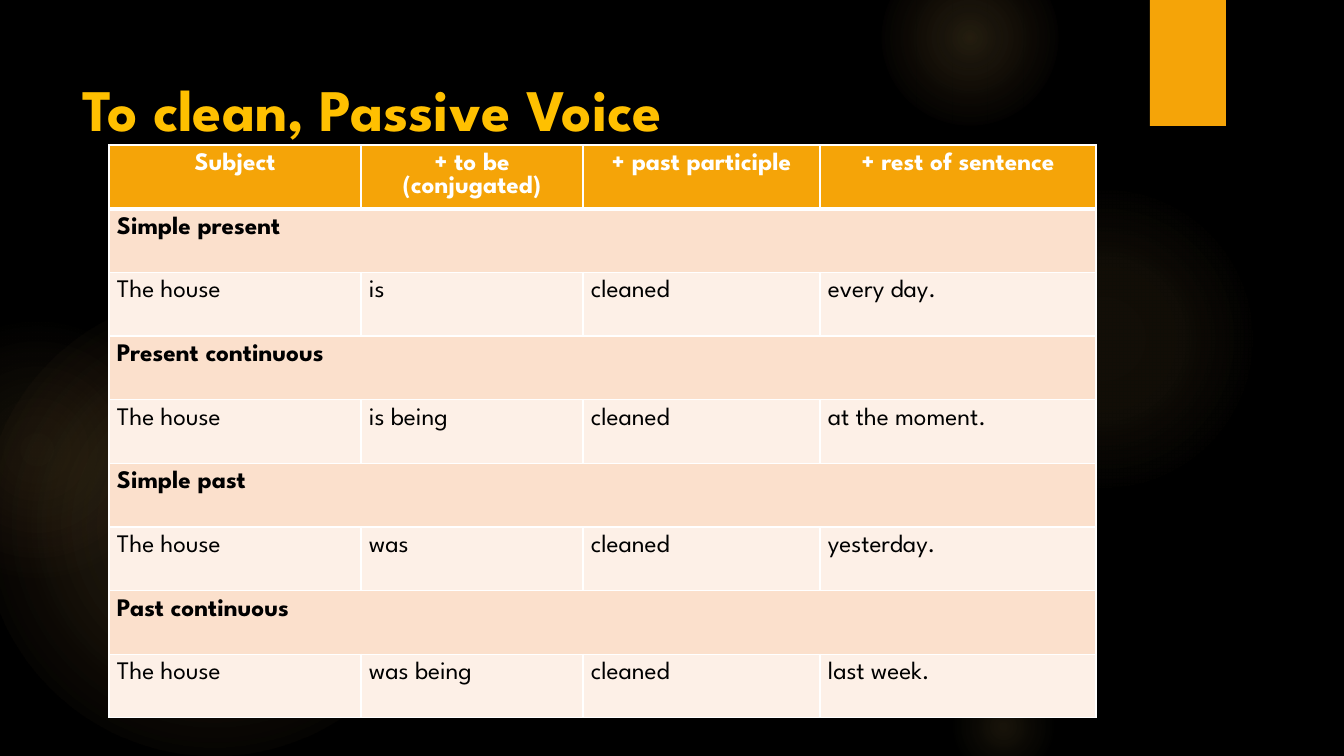
from lxml.etree import SubElement
from pptx import Presentation
from pptx.dml.color import RGBColor
from pptx.enum.shapes import MSO_SHAPE
from pptx.enum.text import MSO_ANCHOR, PP_ALIGN
from pptx.oxml import parse_xml
from pptx.oxml.ns import nsdecls, qn
from pptx.util import Pt

HEADING = "To clean, Passive Voice"
COLUMNS = [
    ("Subject", 252),
    ("+ to be (conjugated)", 222),
    ("+ past participle", 237),
    ("+ rest of sentence", 276),
]
TENSES = [
    ("Simple present", ("The house", "is", "cleaned", "every day.")),
    ("Present continuous", ("The house", "is being", "cleaned", "at the moment.")),
    ("Simple past", ("The house", "was", "cleaned", "yesterday.")),
    ("Past continuous", ("The house", "was being", "cleaned", "last week.")),
]

BLACK = RGBColor(0x00, 0x00, 0x00)
WHITE = RGBColor(0xFF, 0xFF, 0xFF)
GOLD = RGBColor(0xFF, 0xC0, 0x00)
ORANGE = RGBColor(0xF5, 0xA4, 0x08)
PEACH = RGBColor(0xFB, 0xE0, 0xCC)
CREAM = RGBColor(0xFD, 0xF0, 0xE7)
GLOW = RGBColor(0xFA, 0xC9, 0x6A)
CORAL = RGBColor(0xF5, 0x9B, 0x74)

GLOWS = [
    (-17, 294, 462, [(0, GLOW, 11), (36, GLOW, 10), (75, GLOW, 0)]),
    (-93, 320, 260, [(0, GLOW, 8), (36, GLOW, 5), (71, CORAL, 0)]),
    (949, 184, 310, [(0, GLOW, 7), (36, GLOW, 6), (69, GLOW, 0)]),
    (882, -50, 176, [(0, GLOW, 14), (36, GLOW, 7), (73, GLOW, 0)]),
    (949, 672, 109, [(0, GLOW, 10), (31, GLOW, 5), (66, GLOW, 0)]),
]
FONT = "League Spartan"
TABLE_LEFT, TABLE_TOP, TABLE_HEIGHT = 109, 145, 573
CELL_INSET = 8


def px(length):
    return round(length * 914400 / 100.8)


def add_run(paragraph, text, size, color, bold):
    run = paragraph.add_run()
    run.text = text
    run.font.name = FONT
    run.font.size = Pt(size)
    run.font.bold = bold
    run.font.color.rgb = color


def add_glow(slide, left, top, size, stops):
    glow = slide.shapes.add_shape(MSO_SHAPE.OVAL, px(left), px(top), px(size), px(size))
    glow.shadow.inherit = False
    glow.line.fill.background()
    stop_xml = "".join(
        f'<a:gs pos="{position * 1000}"><a:srgbClr val="{color}">'
        f'<a:alpha val="{opacity * 1000}"/></a:srgbClr></a:gs>'
        for position, color, opacity in stops
    )
    gradient = parse_xml(
        f'<a:gradFill {nsdecls("a")}><a:gsLst>{stop_xml}</a:gsLst><a:path path="circle">'
        '<a:fillToRect l="50000" t="50000" r="50000" b="50000"/></a:path></a:gradFill>'
    )
    glow.element.spPr.find(qn("a:prstGeom")).addnext(gradient)


def set_borders(cell, top, bottom):
    properties = cell._tc.get_or_add_tcPr()
    widths = [("lnL", 1), ("lnR", 1), ("lnT", top), ("lnB", bottom)]
    for order, (side, width) in enumerate(widths):
        border = SubElement(properties, qn(f"a:{side}"), w=str(Pt(width)))
        fill = SubElement(border, qn("a:solidFill"))
        SubElement(fill, qn("a:srgbClr"), val=str(WHITE))
        properties.insert(order, border)


def add_tense_table(slide):
    rows = [([name for name, _ in COLUMNS], ORANGE, WHITE, True)]
    for tense, sentence in TENSES:
        rows.append(([tense, "", "", ""], PEACH, BLACK, True))
        rows.append((sentence, CREAM, BLACK, False))
    table = slide.shapes.add_table(
        len(rows), len(COLUMNS), px(TABLE_LEFT), px(TABLE_TOP),
        px(sum(width for _, width in COLUMNS)), px(TABLE_HEIGHT),
    ).table
    table.horz_banding = False
    for column, (_, width) in zip(table.columns, COLUMNS):
        column.width = px(width)
    for r, (texts, fill, color, bold) in enumerate(rows):
        table.rows[r].height = px(TABLE_HEIGHT / len(rows))
        for c, text in enumerate(texts):
            cell = table.cell(r, c)
            cell.margin_left = cell.margin_right = px(CELL_INSET)
            cell.margin_top = cell.margin_bottom = px(CELL_INSET)
            cell.fill.solid()
            cell.fill.fore_color.rgb = fill
            set_borders(cell, 3 if r == 1 else 1, 3 if r == 0 else 1)
            if text:
                paragraph = cell.text_frame.paragraphs[0]
                paragraph.alignment = PP_ALIGN.CENTER if r == 0 else PP_ALIGN.LEFT
                add_run(paragraph, text, 18, color, bold)
        if fill == PEACH:
            table.cell(r, 0).merge(table.cell(r, len(COLUMNS) - 1))


def main():
    deck = Presentation()
    deck.slide_width, deck.slide_height = px(1344), px(756)
    slide = deck.slides.add_slide(deck.slide_layouts[5])
    slide.background.fill.solid()
    slide.background.fill.fore_color.rgb = BLACK

    for glow in GLOWS:
        add_glow(slide, *glow)

    tab = slide.shapes.add_shape(MSO_SHAPE.RECTANGLE, px(1150), 0, px(76), px(126))
    tab.shadow.inherit = False
    tab.fill.solid()
    tab.fill.fore_color.rgb = ORANGE
    tab.line.fill.background()

    title = slide.shapes.title
    slide.shapes.element.append(title.element)
    title.left, title.top, title.width, title.height = px(72), px(50), px(1037), px(154)
    frame = title.text_frame
    frame.word_wrap = True
    frame.vertical_anchor = MSO_ANCHOR.TOP
    frame.margin_top = px(23)
    frame.paragraphs[0].alignment = PP_ALIGN.LEFT
    add_run(frame.paragraphs[0], HEADING, 42, GOLD, True)

    add_tense_table(slide)
    deck.save("out.pptx")


if __name__ == "__main__":
    main()
